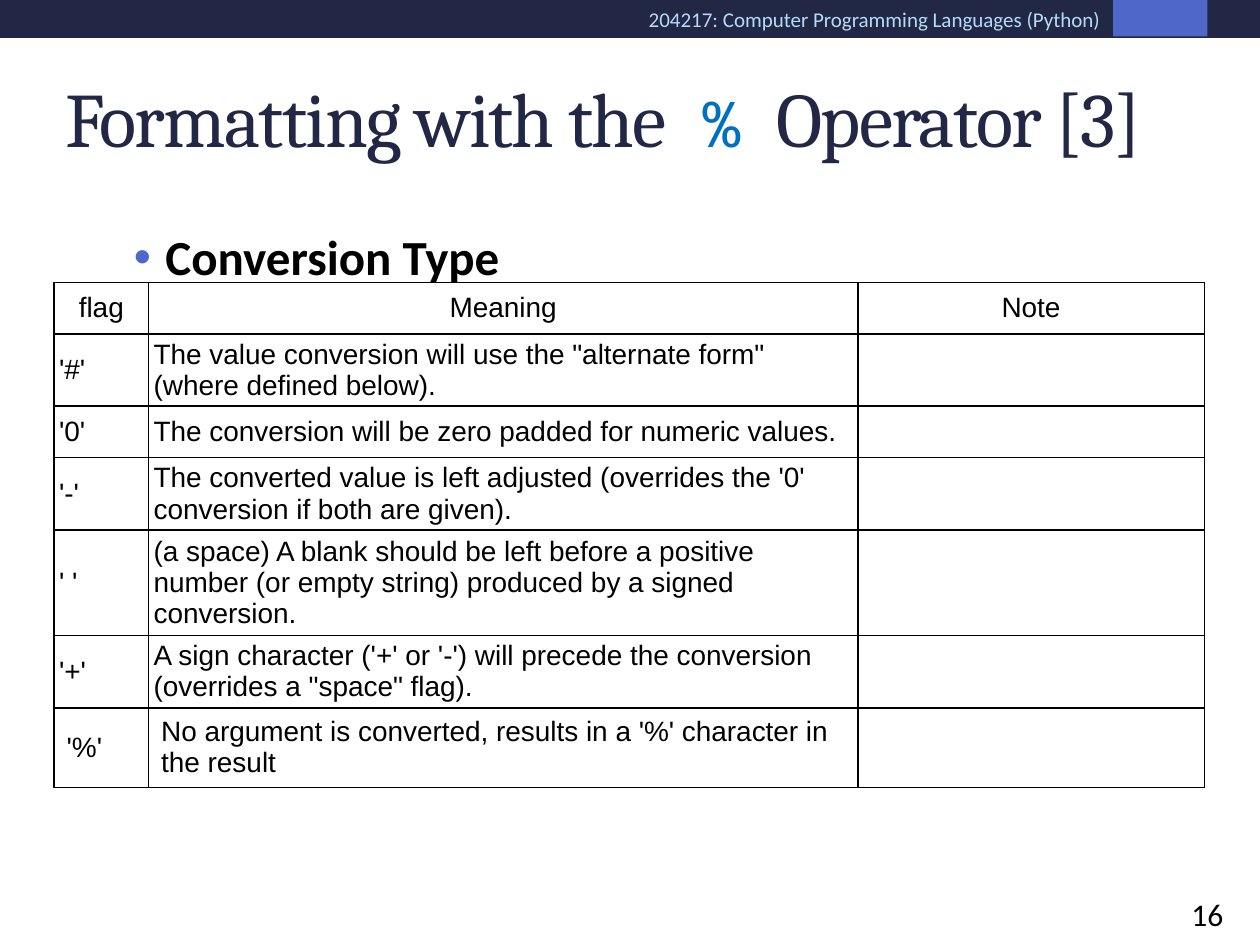
from lxml import etree
from pptx import Presentation
from pptx.dml.color import RGBColor
from pptx.enum.shapes import MSO_SHAPE
from pptx.enum.text import MSO_ANCHOR, MSO_AUTO_SIZE, PP_ALIGN
from pptx.oxml.ns import qn
from pptx.util import Inches, Pt

RECT, PAIR = MSO_SHAPE.RECTANGLE, MSO_SHAPE.DOUBLE_BRACKET
LEFT, MID, RIGHT = PP_ALIGN.LEFT, PP_ALIGN.CENTER, PP_ALIGN.RIGHT
CENTER, FIXED = MSO_ANCHOR.MIDDLE, MSO_AUTO_SIZE.NONE
WIDE, HIGH = Inches(10), Inches(7.5)
COL, ROW = WIDE / 24, HIGH / 30
NAVY, BLUE, BLACK, WHITE = "212745", "4E67C8", "000000", "FFFFFF"

HEADS = ("flag", "Meaning", "Note")
FLAGS = (
    ("'#'", "The value conversion will use the \"alternate form\" (where defined below)."),
    ("'0'", "The conversion will be zero padded for numeric values."),
    ("'-'", "The converted value is left adjusted (overrides the '0' conversion if both are given)."),
    ("' '", "(a space) A blank should be left before a positive number (or empty string) "
            "produced by a signed conversion."),
    ("'+'", "A sign character ('+' or '-') will precede the conversion (overrides a \"space\" flag)."),
    ("'%'", "No argument is converted, results in a '%' character in the result"),
)


def color(code):
    return RGBColor.from_string(code)


def grid(x, y, w, h):
    return round(x * COL), round(y * ROW), round(w * COL), round(h * ROW)


def place(item, *cells):
    item.left, item.top, item.width, item.height = grid(*cells)


def write(para, text, font="Calibri", size=18, ink=BLACK, bold=False, align=LEFT, space=0):
    para.alignment = align
    run = para.add_run()
    run.text = text
    run.font.name, run.font.size, run.font.bold = font, Pt(size), bold
    run.font.color.rgb = color(ink)
    if space:
        run.font._element.set("spc", str(space))


def block(slide, kind, cells, fill=None, line=None):
    item = slide.shapes.add_shape(kind, *grid(*cells))
    item.shadow.inherit = False
    if fill:
        item.fill.solid()
        item.fill.fore_color.rgb = color(fill)
    else:
        item.fill.background()
    if line:
        item.line.color.rgb = color(line)
        item.line.width = Pt(1.5)
    else:
        item.line.fill.background()
    return item


def header(slide):
    block(slide, RECT, (0, -0.08, 24, 1.28), NAVY)
    block(slide, RECT, (21.2, -0.08, 1.8, 1.24), BLUE)
    frame = slide.shapes.add_textbox(*grid(0, 0, 21.2, 1.2)).text_frame
    frame.word_wrap = True
    frame.vertical_anchor = CENTER
    write(frame.paragraphs[0], "204217: Computer Programming Languages (Python)",
          size=12, ink="B4DCFA", align=RIGHT)


def title(slide):
    item = slide.shapes.title
    place(item, 1, 1.2, 22, 5)
    frame = item.text_frame
    frame.auto_size, frame.vertical_anchor = FIXED, CENTER
    para = frame.paragraphs[0]
    look = {"font": "Cambria", "size": 44, "ink": NAVY, "space": -100}
    write(para, "Formatting with the", **look)
    write(para, " % ", font="Noto Sans Mono", size=36, ink="0070C0", space=-100)
    write(para, "Operator [3]", **look)


def bullet(para, mark, ink):
    props = para._p.get_or_add_pPr()
    props.set("marL", str(Inches(0.38)))
    props.set("indent", str(Inches(-0.25)))
    tint = etree.SubElement(props, qn("a:buClr"))
    etree.SubElement(tint, qn("a:srgbClr"), val=ink)
    etree.SubElement(props, qn("a:buChar"), char=mark)


def body(slide):
    item = slide.placeholders[1]
    place(item, 2, 7, 20, 21)
    item.text_frame.auto_size = FIXED
    para = item.text_frame.paragraphs[0]
    para.space_before = Pt(5.6)
    bullet(para, "•", BLUE)
    write(para, "Conversion Type", size=28, bold=True)


def border(cell):
    props = cell._tc.get_or_add_tcPr()
    for spot, side in enumerate(("lnL", "lnR", "lnT", "lnB")):
        line = etree.Element(qn("a:" + side), w=str(Pt(1)))
        fill = etree.SubElement(line, qn("a:solidFill"))
        etree.SubElement(fill, qn("a:srgbClr"), val=BLACK)
        props.insert(spot, line)


def table(slide):
    rows = (HEADS, *((flag, text, "") for flag, text in FLAGS))
    cols = (1.8, 13.51, 6.6)
    tall = 1.64
    cells = grid(1.03, 8.96, sum(cols), tall * len(rows))
    chart = slide.shapes.add_table(len(rows), len(cols), *cells).table
    chart.first_row = chart.horz_banding = False
    for col, wide in zip(chart.columns, cols):
        col.width = round(wide * COL)
    for r, row in enumerate(rows):
        chart.rows[r].height = round(tall * ROW)
        for c, text in enumerate(row):
            cell = chart.cell(r, c)
            cell.fill.background()
            cell.vertical_anchor = CENTER
            if text and 0 < r < len(rows) - 1:
                cell.margin_left = cell.margin_right = Inches(0.04)
                cell.margin_top = cell.margin_bottom = Inches(0.02)
            border(cell)
            if text:
                write(cell.text_frame.paragraphs[0], text, font="Arial", size=16,
                      align=LEFT if r else MID)


def pager(slide):
    item = block(slide, PAIR, (22, 28, 2, 2), line=WHITE)
    item.adjustments[0] = 0.18
    frame = item.text_frame
    frame.margin_left = frame.margin_right = frame.margin_top = frame.margin_bottom = 0
    frame.vertical_anchor = CENTER
    write(frame.paragraphs[0], "16", align=MID)


def main():
    deck = Presentation()
    deck.slide_width, deck.slide_height = WIDE, HIGH
    slide = deck.slides.add_slide(deck.slide_layouts[1])
    for part in (header, body, pager, title, table):
        part(slide)
    deck.save("out.pptx")


if __name__ == "__main__":
    main()
